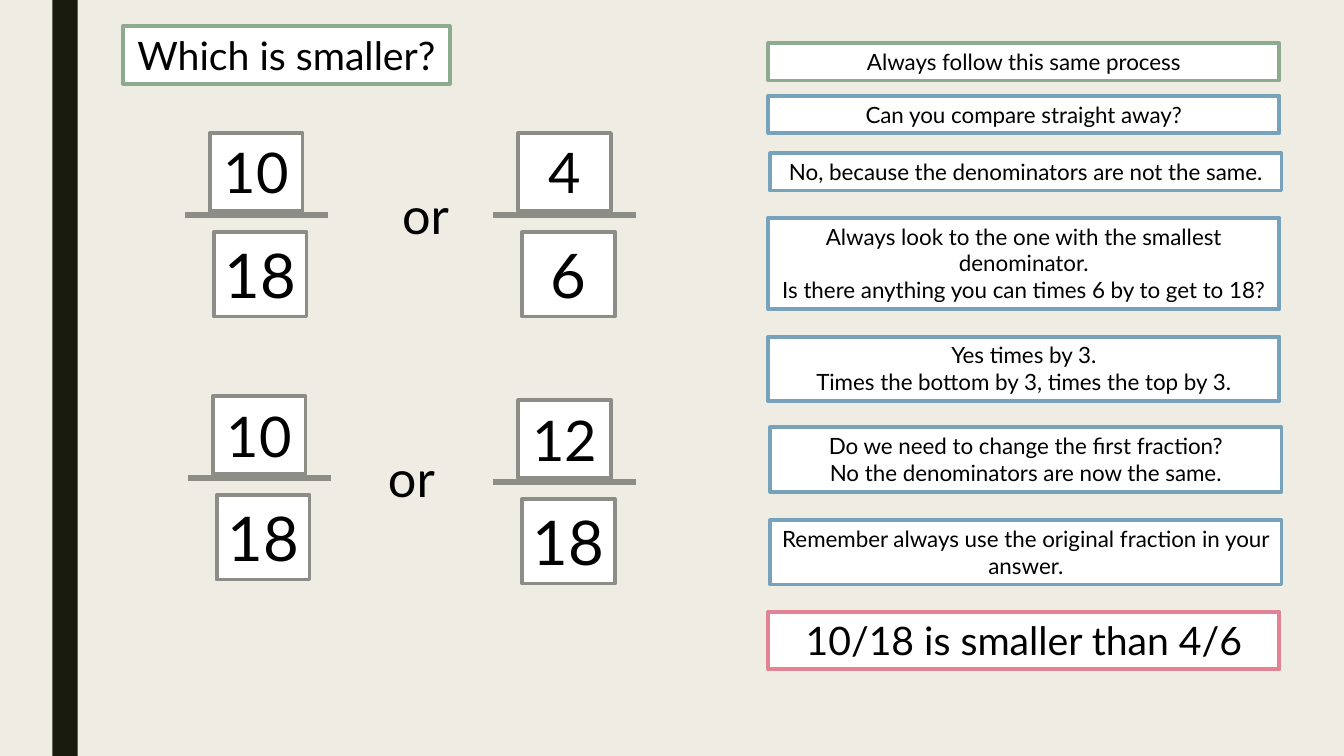
from lxml.etree import SubElement
from pptx import Presentation
from pptx.dml.color import RGBColor
from pptx.enum.shapes import MSO_CONNECTOR, MSO_SHAPE
from pptx.enum.text import MSO_ANCHOR, MSO_AUTO_SIZE, PP_ALIGN
from pptx.oxml.ns import qn
from pptx.util import Inches, Pt

FONT = "Lato"
CREAM = RGBColor(0xEF, 0xED, 0xE3)
DARK = RGBColor(0x19, 0x1B, 0x0E)
WHITE = RGBColor(0xFF, 0xFF, 0xFF)
BLACK = RGBColor(0x00, 0x00, 0x00)
GREEN = RGBColor(0x8D, 0xAB, 0x8E)
BLUE = RGBColor(0x77, 0xA2, 0xBB)
PINK = RGBColor(0xE2, 0x83, 0x94)
GREY = RGBColor(0x8C, 0x8D, 0x86)

# Left and top of each fraction, with its numerator and denominator
FRACTIONS = [
    (1.83, 1.32, "10", "18"),
    (4.89, 1.32, "4", "6"),
    (1.86, 3.93, "10", "18"),
    (4.89, 3.97, "12", "18"),
]
OR_POSITIONS = [(3.89, 1.78), (3.75, 4.39)]

# Left, top, height, border colour, text size and lines of each step
STEPS = [
    (7.62, 0.43, 0.37, GREEN, 16, ["Always follow this same process"]),
    (7.62, 0.95, 0.37, BLUE, 16, ["Can you compare straight away?"]),
    (7.64, 1.52, 0.37, BLUE, 16,
     ["No, because the denominators are not the same."]),
    (7.62, 2.16, 0.91, BLUE, 16,
     ["Always look to the one with the smallest denominator.",
      "Is there anything you can times 6 by to get to 18?"]),
    (7.62, 3.34, 0.64, BLUE, 16,
     ["Yes times by 3.", "Times the bottom by 3, times the top by 3."]),
    (7.64, 4.24, 0.64, BLUE, 16,
     ["Do we need to change the first fraction?",
      "No the denominators are now the same."]),
    (7.64, 5.16, 0.64, BLUE, 16,
     ["Remember always use the original fraction in your answer."]),
    (7.62, 6.07, 0.57, PINK, 28, ["10/18 is smaller than 4/6"]),
]


def write(shape, lines, size, align=PP_ALIGN.CENTER):
    frame = shape.text_frame
    frame.word_wrap = True
    frame.auto_size = MSO_AUTO_SIZE.NONE
    frame.vertical_anchor = MSO_ANCHOR.TOP
    frame.text = "\n".join(lines)
    for paragraph in frame.paragraphs:
        paragraph.alignment = align
        font = paragraph.font
        for run in paragraph.runs:
            font = run.font
            font.name = FONT
            font.size = Pt(size)
            font.color.rgb = BLACK


def outline(shape, color):
    shape.fill.solid()
    shape.fill.fore_color.rgb = WHITE
    shape.line.color.rgb = color
    shape.line.width = Pt(2.75)


def add_box(shapes, left, top, width, height, lines, color, size):
    box = shapes.add_shape(MSO_SHAPE.RECTANGLE, Inches(left), Inches(top),
                           Inches(width), Inches(height))
    box.shadow.inherit = False
    outline(box, color)
    write(box, lines, size)


def add_fraction(slide, left, top, numerator, denominator):
    shapes = slide.shapes.add_group_shape().shapes
    add_box(shapes, left + 0.25, top, 0.92, 0.77, [numerator], GREY, 40)
    add_box(shapes, left + 0.29, top + 0.98, 0.92, 0.84, [denominator], GREY, 44)
    bar_y = Inches(top + 0.81)
    bar = shapes.add_connector(MSO_CONNECTOR.STRAIGHT, Inches(left), bar_y,
                               Inches(left + 1.42), bar_y)
    bar.line.color.rgb = GREY
    bar.line.width = Pt(4.5)
    SubElement(bar._element.spPr, qn("a:effectLst"))


def add_title(slide, text):
    title = slide.shapes.title
    title.left, title.top = Inches(1.22), Inches(0.26)
    title.width, title.height = Inches(3.24), Inches(0.57)
    outline(title, GREEN)
    write(title, [text], 28)


def add_side_band(slide, height):
    band = slide.shapes.add_shape(MSO_SHAPE.RECTANGLE, Inches(0.52), 0,
                                  Inches(0.25), height)
    band.shadow.inherit = False
    band.fill.solid()
    band.fill.fore_color.rgb = DARK
    band.line.fill.background()


def main():
    deck = Presentation()
    deck.slide_width, deck.slide_height = Inches(13.33), Inches(7.5)
    slide = deck.slides.add_slide(deck.slide_layouts.get_by_name("Title Only"))
    slide.background.fill.solid()
    slide.background.fill.fore_color.rgb = CREAM

    add_side_band(slide, deck.slide_height)
    add_title(slide, "Which is smaller?")
    for fraction in FRACTIONS:
        add_fraction(slide, *fraction)
    for left, top in OR_POSITIONS:
        word = slide.shapes.add_textbox(Inches(left), Inches(top),
                                        Inches(0.86), Inches(0.71))
        write(word, ["or"], 36, align=PP_ALIGN.LEFT)
    for left, top, height, color, size, lines in STEPS:
        add_box(slide.shapes, left, top, 5.07, height, lines, color, size)

    deck.save("out.pptx")


if __name__ == "__main__":
    main()
